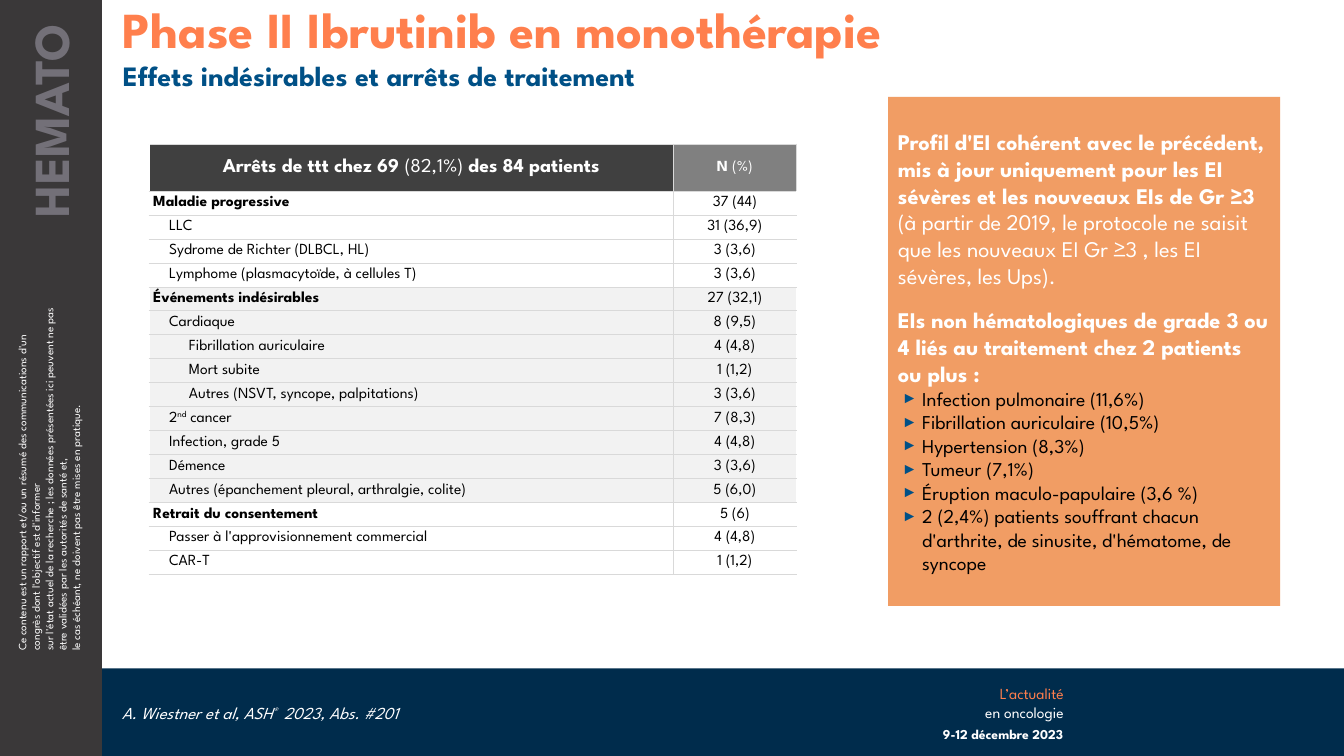
"""Build the slide on adverse events and treatment discontinuation."""
import dataclasses

import lxml.etree
import pptx
import pptx.dml.color
import pptx.enum.shapes
import pptx.enum.text
import pptx.oxml.ns
import pptx.util

Cm = pptx.util.Cm
Align = pptx.enum.text.PP_ALIGN
Anchor = pptx.enum.text.MSO_ANCHOR
qn = pptx.oxml.ns.qn


@dataclasses.dataclass(frozen=True)
class Theme:
    """Colours, font and type sizes of the slide."""
    font: str = "League Spartan"
    white: str = "FFFFFF"
    black: str = "000000"
    navy: str = "002C4C"
    blue: str = "005086"
    coral: str = "FF7F4D"
    orange: str = "ED7D31"
    sidebar: str = "3A3839"
    section: str = "737078"
    header: str = "404040"
    header_value: str = "808080"
    band: str = "F2F2F2"
    rule: str = "D9D9D9"
    title: float = 36
    subtitle: float = 20
    lead: float = 16
    text: float = 14
    citation: float = 12
    small: float = 11
    date: float = 9.7
    fine: float = 8


THEME = Theme()

STOPS = [
    (THEME.white, [
        (0, "Maladie progressive", "37 (44)"),
        (1, "LLC", "31 (36,9)"),
        (1, "Sydrome de Richter (DLBCL, HL)", "3 (3,6)"),
        (1, "Lymphome (plasmacytoïde, à cellules T)", "3 (3,6)"),
    ]),
    (THEME.band, [
        (0, "Événements indésirables", "27 (32,1)"),
        (1, "Cardiaque", "8 (9,5)"),
        (2, "Fibrillation auriculaire", "4 (4,8)"),
        (2, "Mort subite", "1 (1,2)"),
        (2, "Autres (NSVT, syncope, palpitations)", "3 (3,6)"),
        (1, [("2", {}), ("nd", {"raised": True}), (" cancer", {})], "7 (8,3)"),
        (1, "Infection, grade 5", "4 (4,8)"),
        (1, "Démence", "3 (3,6)"),
        (1, "Autres (épanchement pleural, arthralgie, colite)", "5 (6,0)"),
    ]),
    (THEME.white, [
        (0, "Retrait du consentement", "5 (6)"),
        (1, "Passer à l'approvisionnement commercial", "4 (4,8)"),
        (1, "CAR-T", "1 (1,2)"),
    ]),
]

EVENTS = [
    "Infection pulmonaire (11,6%)",
    "Fibrillation auriculaire (10,5%)",
    "Hypertension (8,3%)",
    "Tumeur (7,1%)",
    "Éruption maculo-papulaire (3,6 %)",
    "2 (2,4%) patients souffrant chacun d'arthrite, de sinusite, d'hématome, de syncope",
]


def rgb(colour):
    """Turn a hex string into a colour."""
    return pptx.dml.color.RGBColor.from_string(colour)


def add_span(para, text, size, colour, bold=False, italic=False, raised=False):
    """Add formatted text to a paragraph, breaking lines at newlines."""
    for index, line in enumerate(text.split("\n")):
        if index:
            para.add_line_break()
        span = para.add_run()
        span.text = line
        span.font.name = THEME.font
        span.font.size = pptx.util.Pt(size)
        span.font.color.rgb = rgb(colour)
        span.font.bold = bold
        span.font.italic = italic
        if raised:
            span.font._element.set("baseline", "30000")


def write(frame, text, align=Align.LEFT, spacing=None, before=0, bullet=False, **style):
    """Write one paragraph from a string or from (text, style) pairs."""
    para = frame.paragraphs[0]
    if para.runs:
        para = frame.add_paragraph()
    if bullet:
        add_bullet(para)
    para.alignment = align
    para.space_before = pptx.util.Pt(before)
    if spacing:
        para.line_spacing = spacing
    for part, changes in [(text, {})] if isinstance(text, str) else text:
        add_span(para, part, **{**style, **changes})


def add_bullet(para):
    """Give a paragraph a hanging arrow bullet."""
    para.level = 1
    properties = para._p.get_or_add_pPr()
    properties.set("marL", str(Cm(0.61)))
    properties.set("indent", str(Cm(-0.51)))
    tint = lxml.etree.SubElement(properties, qn("a:buClr"))
    lxml.etree.SubElement(tint, qn("a:srgbClr"), val=THEME.blue)
    lxml.etree.SubElement(properties, qn("a:buSzPct"), val="80000")
    lxml.etree.SubElement(properties, qn("a:buFont"), typeface="Arial")
    lxml.etree.SubElement(properties, qn("a:buChar"), char="►")


def add_block(page, left, top, width, height, colour, opacity=None):
    """Add a plain filled rectangle."""
    box = page.shapes.add_shape(pptx.enum.shapes.MSO_SHAPE.RECTANGLE,
                                Cm(left), Cm(top), Cm(width), Cm(height))
    box.shadow.inherit = False
    box.fill.solid()
    box.fill.fore_color.rgb = rgb(colour)
    box.line.fill.background()
    if opacity:
        tint = box._element.spPr.find(".//" + qn("a:srgbClr"))
        lxml.etree.SubElement(tint, qn("a:alpha"), val=str(opacity * 1000))
    return box


def add_text(page, left, top, width, height, text, rotation=0,
             inset_left=0.25, inset_right=0.25, **style):
    """Add a wrapped text box holding one paragraph."""
    box = page.shapes.add_textbox(Cm(left), Cm(top), Cm(width), Cm(height))
    box.rotation = rotation
    frame = box.text_frame
    frame.word_wrap = True
    frame.margin_left, frame.margin_right = Cm(inset_left), Cm(inset_right)
    write(frame, text, **style)


def fill_cell(cell, text, fill, indent=0.1, borders=None, **style):
    """Write a table cell with its fill and borders."""
    cell.vertical_anchor = Anchor.MIDDLE
    cell.margin_left, cell.margin_right = Cm(indent), Cm(0.1)
    cell.margin_top = cell.margin_bottom = 0
    write(cell.text_frame, text, **style)
    properties = cell._tc.get_or_add_tcPr()
    for side, (colour, points) in (borders or {}).items():
        line = lxml.etree.SubElement(properties, qn("a:ln" + side),
                                     w=str(pptx.util.Pt(points)))
        paint = lxml.etree.SubElement(line, qn("a:solidFill"))
        lxml.etree.SubElement(paint, qn("a:srgbClr"), val=colour)
    cell.fill.solid()
    cell.fill.fore_color.rgb = rgb(fill)


def add_stops_table(page):
    """Add the table of treatment discontinuations."""
    rows = [(fill, *row) for fill, group in STOPS for row in group]
    height, header_height = 10.84, 1.19
    table = page.shapes.add_table(len(rows) + 1, 2, Cm(3.76), Cm(3.63),
                                  Cm(16.31), Cm(height)).table
    table.horz_banding = False
    table.columns[0].width, table.columns[1].width = Cm(13.21), Cm(3.1)
    for row in table.rows:
        row.height = Cm((height - header_height) / len(rows))
    table.rows[0].height = Cm(header_height)

    rule = (THEME.rule, 0.75)
    label_borders = {side: rule for side in "RTB"}
    header_borders = {side: rule for side in "LRTB"}
    value_borders = {**header_borders, "R": (THEME.white, 0.25)}
    header = dict(align=Align.CENTER, colour=THEME.white, bold=True)
    fill_cell(table.cell(0, 0),
              [("Arrêts de ttt chez 69 ", {}), ("(82,1%) ", {"bold": False}),
               ("des 84 patients", {})],
              THEME.header, borders=label_borders, size=THEME.text, **header)
    fill_cell(table.cell(0, 1), [("N ", {}), ("(%)", {"bold": False})],
              THEME.header_value, borders=header_borders, size=THEME.small, **header)
    body = dict(size=THEME.small, colour=THEME.black)
    for index, (fill, level, label, value) in enumerate(rows, 1):
        fill_cell(table.cell(index, 0), label, fill, indent=(0.1, 0.5, 1)[level],
                  borders=label_borders, bold=level == 0, **body)
        fill_cell(table.cell(index, 1), value, fill, borders=value_borders,
                  align=Align.CENTER, **body)


def add_profile_panel(page):
    """Add the orange panel on the adverse event profile."""
    frame = add_block(page, 22.38, 2.44, 9.88, 12.83, THEME.orange, opacity=75).text_frame
    frame.word_wrap = True
    frame.vertical_anchor = Anchor.MIDDLE
    lead = dict(size=THEME.lead, colour=THEME.white, bold=True)
    write(frame, [
        ("Profil d'EI cohérent avec le précédent, mis à jour uniquement pour les EI "
         "sévères et les nouveaux EIs de Gr ≥3 ", {}),
        ("(à partir de 2019, le protocole ne saisit que les nouveaux EI Gr ≥3 , "
         "les EI sévères, les Ups).", {"bold": False})], **lead)
    write(frame, "EIs non hématologiques de grade 3 ou 4 liés au traitement "
          "chez 2 patients ou plus :", before=12, **lead)
    for event in EVENTS:
        write(frame, event, bullet=True, size=THEME.text, colour=THEME.black)


def add_surround(page):
    """Add the footer band, the sidebar and their texts."""
    add_block(page, 2.57, 16.84, 31.3, 2.21, THEME.navy)
    add_block(page, 0, 0, 2.57, 19.05, THEME.sidebar)
    add_text(page, -3.33, 11.1, 9.14, 1.96,
             "Ce contenu est un rapport et/ou un résumé des communications d'un congrès "
             "dont l'objectif est d'informer \nsur l'état actuel de la recherche ; les "
             "données présentées ici peuvent ne pas être validées par les autorités de "
             "santé et, \nle cas échéant, ne doivent pas être mises en pratique.",
             rotation=270, size=THEME.fine, colour=THEME.white)
    add_text(page, -2.64, 3, 7.8, 1.8, "HEMATO", rotation=270, inset_right=0.61,
             align=Align.RIGHT, size=THEME.title, colour=THEME.section, bold=True)
    add_text(page, 22.89, 17.12, 4.17, 1.19,
             [("L’actualité\n", {"colour": THEME.coral}), ("en oncologie", {})],
             align=Align.RIGHT, size=THEME.small, colour=THEME.white)
    add_text(page, 22.89, 18.21, 3.91, 0.69, "9-12 décembre 2023", inset_right=0,
             align=Align.RIGHT, spacing=0.9, size=THEME.date, colour=THEME.white, bold=True)
    add_text(page, 2.82, 17.63, 14.33, 0.69,
             [("A. Wiestner et al, ASH", {}), ("® ", {"raised": True}),
              (" 2023, Abs. #201", {})],
             spacing=0.9, size=THEME.citation, colour=THEME.white, italic=True)


def main():
    """Build and save the slide."""
    deck = pptx.Presentation()
    deck.slide_width, deck.slide_height = Cm(33.87), Cm(19.05)
    page = deck.slides.add_slide(deck.slide_layouts[6])
    add_surround(page)
    heading = dict(inset_left=0.51, spacing=0.9, bold=True)
    add_text(page, 2.59, 0, 31.27, 1.45, "Phase II Ibrutinib en monothérapie",
             size=THEME.title, colour=THEME.coral, **heading)
    add_text(page, 2.59, 1.45, 31.27, 0.94, "Effets indésirables et arrêts de traitement",
             size=THEME.subtitle, colour=THEME.blue, **heading)
    add_profile_panel(page)
    add_stops_table(page)
    deck.save("out.pptx")


if __name__ == "__main__":
    main()
